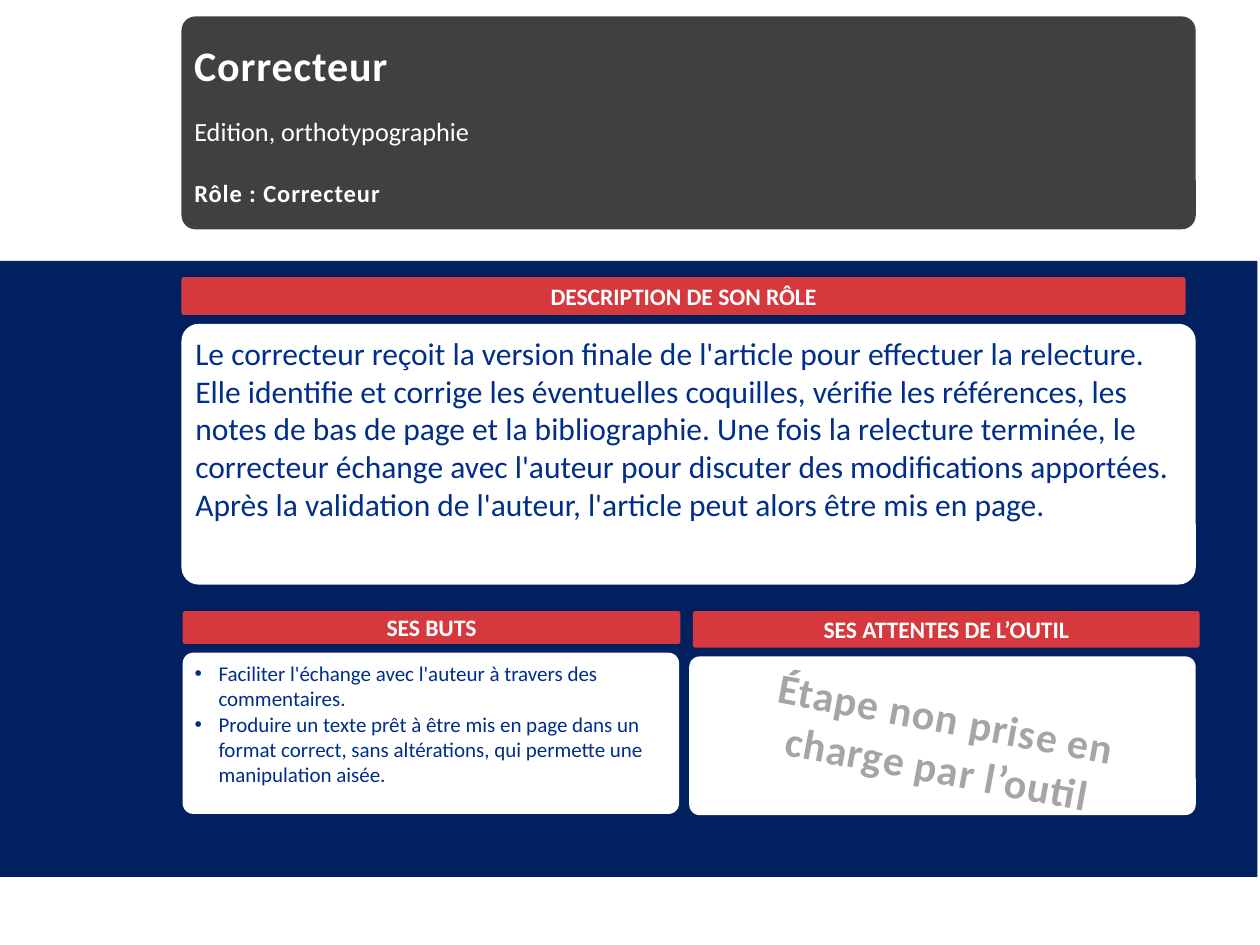
from pptx import Presentation
from pptx.dml.color import RGBColor
from pptx.enum.shapes import MSO_SHAPE as Shape
from pptx.enum.text import MSO_ANCHOR as Anchor, MSO_AUTO_SIZE as Fit, PP_ALIGN as Align
from pptx.oxml.ns import qn
from pptx.util import Inches, Pt
from lxml.etree import SubElement

NAVY, GREY, RED = "002060", "404040", "D5393D"
WHITE, BLUE, PALE = "FFFFFF", "002E89", "A5A5A5"


def rgb(code):
    return RGBColor.from_string(code)


def add_box(slide, area, fill, kind=Shape.ROUNDED_RECTANGLE):
    """Plain filled shape; rounded ones share one corner ratio."""
    box = slide.shapes.add_shape(kind, *map(Inches, area))
    box.shadow.inherit = False
    box.fill.solid()
    box.fill.fore_color.rgb = rgb(fill)
    box.line.fill.background()
    if kind == Shape.ROUNDED_RECTANGLE:
        box.adjustments[0] = 0.066
    set_frame(box.text_frame, Anchor.TOP)
    return box


def set_frame(frame, anchor, side=0.07, edge=0.04):
    frame.word_wrap = True
    frame.auto_size = Fit.NONE
    frame.vertical_anchor = anchor
    frame.margin_left = frame.margin_right = Inches(side)
    frame.margin_top = frame.margin_bottom = Inches(edge)


def add_text(frame, text, size, color, bold=False, align=Align.LEFT,
             gap=0, track=0, bullet=False):
    """Fill the empty first paragraph, or add one after a gap."""
    first = not frame.text
    para = frame.paragraphs[0] if first else frame.add_paragraph()
    run = para.add_run()
    run.text = text
    if track:
        run._r.get_or_add_rPr().set("spc", str(int(track * 100)))
    if bullet:
        props = para._p.get_or_add_pPr()
        props.set("marL", str(Inches(0.19)))
        props.set("indent", str(-Inches(0.19)))
        SubElement(props, qn("a:buFont")).set("typeface", "Arial")
        SubElement(props, qn("a:buChar")).set("char", "•")
    para.alignment = align
    para.space_before = Pt(0 if first else gap)
    font = para.font
    font.name, font.size, font.bold = "Calibri", Pt(size), bold
    font.color.rgb = rgb(color)


def add_head(slide, area, text):
    """Red section heading."""
    frame = add_box(slide, area, RED).text_frame
    frame.vertical_anchor = Anchor.MIDDLE
    add_text(frame, text, 13.5, WHITE, True, Align.CENTER)


def add_card(slide, area, lines=(), size=12, bullet=False):
    """White panel with blue text."""
    frame = add_box(slide, area, WHITE).text_frame
    for line in lines:
        add_text(frame, line, size, BLUE, bullet=bullet)


def add_title(slide):
    """Dark panel with the title above its subtitle and role."""
    frame = add_box(slide, (1.44, 0.13, 8.05, 1.69), GREY).text_frame
    frame.vertical_anchor = Anchor.BOTTOM
    frame.margin_bottom = Inches(0.14)
    add_text(frame, "Edition, orthotypographie", 15, WHITE)
    add_text(frame, "Rôle : Correcteur", 14, WHITE, True, gap=18, track=0.5)

    title = slide.shapes.title
    title.left, title.top, title.width, title.height = map(
        Inches, (1.47, 0.26, 7.99, 0.5))
    set_frame(title.text_frame, Anchor.MIDDLE)
    add_text(title.text_frame, "Correcteur", 24, WHITE, True, track=0.5)
    slide.shapes._spTree.append(title._element)  # bring in front of the panel


def add_note(slide):
    """Tilted notice over the last card."""
    note = slide.shapes.add_textbox(*map(Inches, (5.55, 5.44, 3.85, 0.91)))
    note.rotation = 10.5
    set_frame(note.text_frame, Anchor.TOP, 0.1, 0.05)
    add_text(note.text_frame, "Étape non prise en charge par l’outil",
             24, PALE, True, Align.CENTER, track=0.5)


def main():
    deck = Presentation()
    deck.slide_width, deck.slide_height = Inches(10), Inches(7.5)
    slide = deck.slides.add_slide(deck.slide_layouts[5])

    # Background band and title
    add_box(slide, (0, 2.07, 9.98, 4.89), NAVY, Shape.RECTANGLE)
    add_title(slide)

    # Role
    add_head(slide, (1.44, 2.2, 7.97, 0.3), "DESCRIPTION DE SON RÔLE")
    add_card(slide, (1.44, 2.57, 8.05, 2.07), [
        "Le correcteur reçoit la version finale de l'article pour effectuer "
        "la relecture. Elle identifie et corrige les éventuelles coquilles, "
        "vérifie les références, les notes de bas de page et la "
        "bibliographie. Une fois la relecture terminée, le correcteur "
        "échange avec l'auteur pour discuter des modifications apportées. "
        "Après la validation de l'auteur, l'article peut alors être mis en "
        "page."], 18)

    # Goals
    add_card(slide, (1.45, 5.18, 3.94, 1.28), [
        "Faciliter l'échange avec l'auteur à travers des commentaires.",
        "Produire un texte prêt à être mis en page dans un format correct, "
        "sans altérations, qui permette une manipulation aisée."],
        bullet=True)
    add_head(slide, (1.45, 4.85, 3.95, 0.26), "SES BUTS")

    # Needs
    add_card(slide, (5.47, 5.21, 4.02, 1.26))
    add_head(slide, (5.5, 4.85, 4.02, 0.29), "SES ATTENTES DE L’OUTIL")
    add_note(slide)

    deck.save("out.pptx")


if __name__ == "__main__":
    main()
